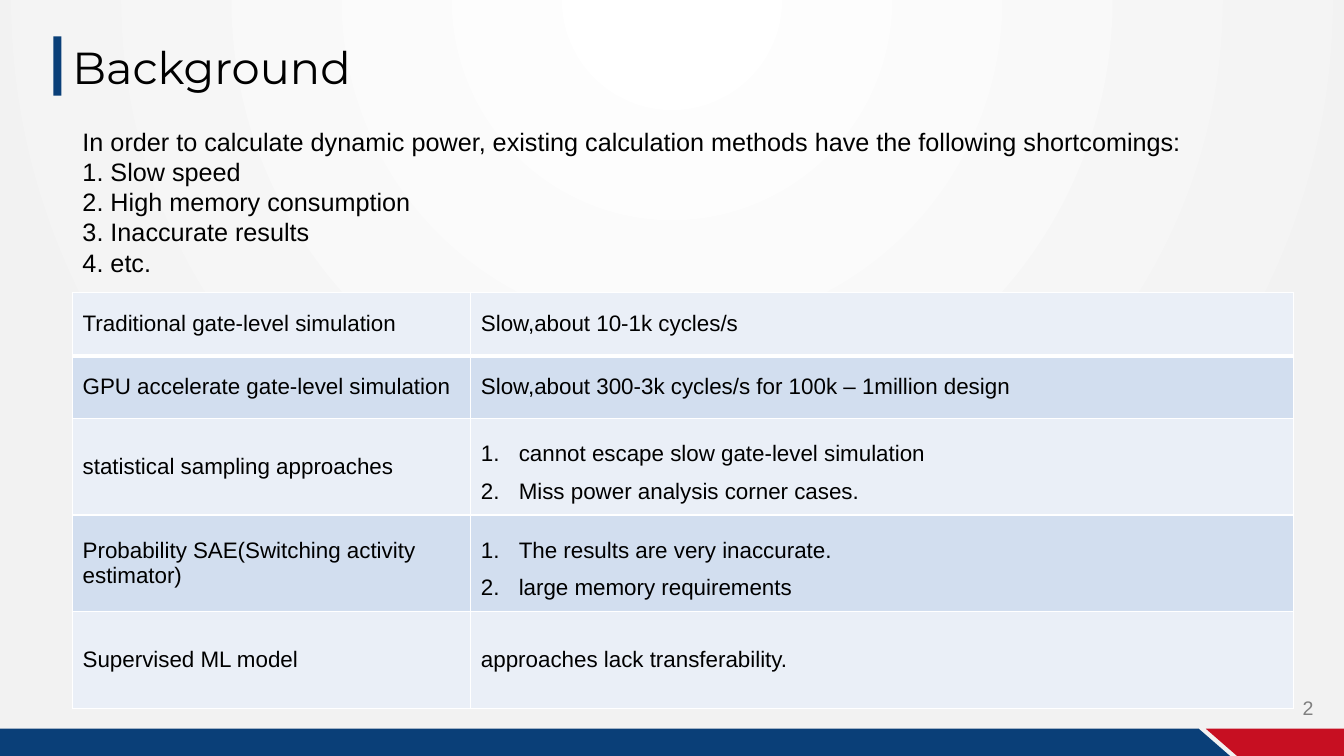
from pptx import Presentation
from pptx.dml.color import RGBColor
from pptx.enum.shapes import MSO_SHAPE as Shape
from pptx.enum.text import MSO_ANCHOR as Anchor, MSO_AUTO_SIZE as Fit
from pptx.oxml import parse_xml
from pptx.util import Inches, Pt

# Content
TITLE = "Background"
INTRO = [
    "In order to calculate dynamic power, existing calculation methods "
    "have the following shortcomings:",
    "1. Slow speed",
    "2. High memory consumption",
    "3. Inaccurate results",
    "4. etc.",
]
# A list in a cell becomes numbered points
METHODS = [
    ("Traditional gate-level simulation", "Slow,about 10-1k cycles/s"),
    ("GPU accelerate gate-level simulation",
     "Slow,about 300-3k cycles/s for 100k – 1million design"),
    ("statistical sampling approaches",
     ["cannot escape slow gate-level simulation",
      "Miss power analysis corner cases."]),
    ("Probability SAE(Switching activity estimator)",
     ["The results are very inaccurate.", "large memory requirements"]),
    ("Supervised ML model", "approaches lack transferability."),
]
PAGE = "2"

# Format
WIDE, HIGH = 13.33, 7.5
BLUE, RED = "0A3F78", "C70F22"
BANDS = ["EAEFF7", "D2DEEF"]
COLS = [3.95, 8.16]
ROWS = [0.63, 0.62, 0.96, 0.96, 0.96]
HEAD = {"name": "Montserrat", "size": Pt(32)}
BODY = {"name": "Arial", "size": Pt(18)}
CELL = {"name": "Arial", "size": Pt(16)}
FOOT = {"name": "Arial", "size": Pt(14)}
NS = 'xmlns:a="http://schemas.openxmlformats.org/drawingml/2006/main"'


def tint(part, color):
    if hasattr(part, "solid"):
        part.solid()
        part = part.fore_color
    else:
        part = part.color
    part.rgb = RGBColor.from_string(color)


def write(frame, lines, style, color="000000", points=False):
    for i, line in enumerate(lines):
        para = frame.paragraphs[0] if i == 0 else frame.add_paragraph()
        if points:
            props = para._p.get_or_add_pPr()
            props.set("marL", str(Inches(0.375)))
            props.set("indent", str(-Inches(0.375)))
            props.append(parse_xml(f'<a:buFont {NS} typeface="+mj-lt"/>'))
            props.append(parse_xml(f'<a:buAutoNum {NS} type="arabicPeriod"/>'))
            para.line_spacing = 1.5
        run = para.add_run()
        run.text = line
        for key, val in style.items():
            setattr(run.font, key, val)
        tint(run.font, color)


def label(slide, box, lines, style, color="000000", wrap=False):
    frame = slide.shapes.add_textbox(*map(Inches, box)).text_frame
    frame.word_wrap = wrap
    frame.auto_size = Fit.SHAPE_TO_FIT_TEXT
    write(frame, lines, style, color)


def paint(shape, color):
    shape.shadow.inherit = False
    tint(shape.fill, color)
    shape.line.fill.background()


def border(cell, sides):
    props = cell._tc.get_or_add_tcPr()
    for side, width in sides.items():
        props.append(parse_xml(
            f'<a:ln{side} {NS} w="{Pt(width)}"><a:solidFill>'
            f'<a:srgbClr val="FFFFFF"/></a:solidFill></a:ln{side}>'))


def backdrop(slide):
    fill = slide.background.fill
    fill.gradient()
    old = slide._element.cSld.bg.bgPr.find(
        "{http://schemas.openxmlformats.org/drawingml/2006/main}gradFill")
    new = parse_xml(
        f'<a:gradFill {NS} rotWithShape="1"><a:gsLst>'
        '<a:gs pos="0"><a:srgbClr val="FFFFFF"/></a:gs>'
        '<a:gs pos="100000"><a:srgbClr val="F2F2F2"/></a:gs></a:gsLst>'
        '<a:path path="circle"><a:fillToRect l="50000" t="-80000" '
        'r="50000" b="180000"/></a:path></a:gradFill>')
    old.getparent().replace(old, new)


def footer(slide):
    top, slant = 7.23, 0.31
    left, right = 11.89, 11.96
    bands = [
        (BLUE, [(0, top), (left, top), (left + slant, HIGH), (0, HIGH)]),
        (RED, [(right, top), (WIDE, top), (WIDE, HIGH), (right + slant, HIGH)]),
    ]
    for color, dots in bands:
        dots = [(Inches(x), Inches(y)) for x, y in dots]
        form = slide.shapes.build_freeform(*dots[0])
        form.add_line_segments(dots[1:], close=True)
        paint(form.convert_to_shape(), color)


def grid(slide):
    box = (0.72, 2.9, sum(COLS), sum(ROWS))
    table = slide.shapes.add_table(
        len(ROWS), len(COLS), *map(Inches, box)).table
    table.first_row = table.horz_banding = False
    for col, width in zip(table.columns, COLS):
        col.width = Inches(width)
    for r, (row, items) in enumerate(zip(table.rows, METHODS)):
        row.height = Inches(ROWS[r])
        sides = {"L": 1, "R": 1, "T": 3 if r == 1 else 1,
                 "B": 3 if r == 0 else 1}
        for cell, item in zip(row.cells, items):
            border(cell, sides)
            tint(cell.fill, BANDS[r % 2])
            cell.vertical_anchor = Anchor.MIDDLE
            points = isinstance(item, list)
            write(cell.text_frame, item if points else [item], CELL,
                  points=points)


def main():
    deck = Presentation()
    deck.slide_width, deck.slide_height = Inches(WIDE), Inches(HIGH)
    slide = deck.slides.add_slide(deck.slide_layouts[6])

    # Backdrop, footer and title
    backdrop(slide)
    footer(slide)
    bar = slide.shapes.add_shape(
        Shape.RECTANGLE, *map(Inches, (0.53, 0.36, 0.08, 0.59)))
    paint(bar, BLUE)
    label(slide, (0.62, 0.34, 9, 0.64), [TITLE], HEAD, wrap=True)

    # Body and page number
    grid(slide)
    label(slide, (0.72, 1.2, 11.2, 1.92), INTRO, BODY)
    label(slide, (12.82, 6.86, 0.31, 0.34), [PAGE], FOOT, "808080")
    deck.save("out.pptx")


if __name__ == "__main__":
    main()
